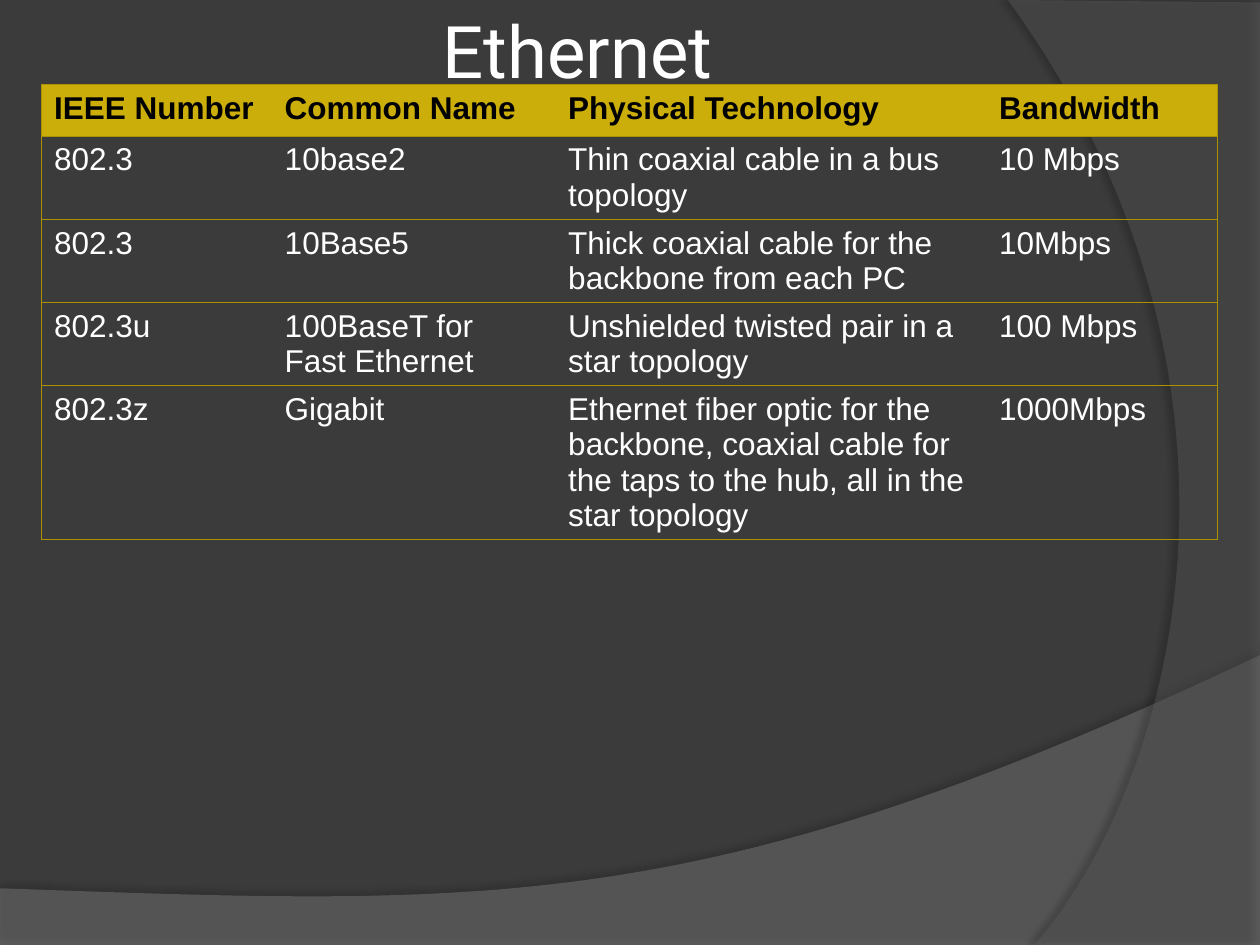
import pptx
import pptx.util
import pptx.dml.color
import pptx.enum.text
import pptx.oxml
import pptx.oxml.ns
from pptx.util import Inches

HUES = {"back": "3B3B3B", "wave": "7F7F7F", "arc": "5E5E5E", "shade": "000000",
        "head": "CCAE0A", "line": "AB9200", "dark": "000000", "light": "FFFFFF"}
NS = pptx.oxml.ns.nsdecls("a")


def tint(name):
    return pptx.dml.color.RGBColor.from_string(HUES[name])


def write(frame, text, font="Arial", size=18, hue="light", bold=False, align="LEFT"):
    para = frame.paragraphs[0]
    para.alignment = getattr(pptx.enum.text.PP_ALIGN, align)
    run = para.add_run()
    run.text = text
    run.font.name = font
    run.font.size = pptx.util.Pt(size)
    run.font.bold = bold
    run.font.color.rgb = tint(hue)


deck = pptx.Presentation()
deck.slide_width, deck.slide_height = Inches(10), Inches(7.5)
slide = deck.slides.add_slide(deck.slide_layouts[5])
slide.background.fill.solid()
slide.background.fill.fore_color.rgb = tint("back")
title = slide.shapes.title

# Backdrop curves: straight corners, then one Bezier from the last corner.
# Each: hue, opacity %, shadow opacity %, shadow distance pt, angle, corners, curve
curves = [
    ("wave", 45, 35, 3.5, 270, [(0, 7.05), (0, 7.5), (10, 7.5), (10, 5.2)],
     [(5.59, 7.29), (3.91, 7.19), (0, 7.05)]),
    ("arc", 40, 45, 4, 180, [(10, 0.02), (10, 7.5), (8.21, 7.5)],
     [(9.35, 6.19), (10.18, 3), (8, 0)]),
]
STEPS = 60
for hue, alpha, dim, dist, angle, points, bend in curves:
    ends = [points[-1]] + bend
    dots = list(points)
    for step in range(1, STEPS + 1):
        t = step / STEPS
        mix = [(1 - t) ** 3, 3 * t * (1 - t) ** 2, 3 * t * t * (1 - t), t ** 3]
        dots.append([sum(m * e[axis] for m, e in zip(mix, ends)) for axis in (0, 1)])
    dots = [(Inches(x), Inches(y)) for x, y in dots]
    pen = slide.shapes.build_freeform(*dots[0], scale=1.0)
    pen.add_line_segments(dots[1:], close=True)
    shape = pen.convert_to_shape()
    shape.fill.solid()
    shape.fill.fore_color.rgb = tint(hue)
    shape.line.fill.background()
    color = shape.element.spPr.find(".//" + pptx.oxml.ns.qn("a:srgbClr"))
    color.append(pptx.oxml.parse_xml(f'<a:alpha {NS} val="{alpha * 1000}"/>'))
    shape.element.spPr.append(pptx.oxml.parse_xml(
        f'<a:effectLst {NS}><a:outerShdw blurRad="{pptx.util.Pt(4)}" '
        f'dist="{pptx.util.Pt(dist)}" dir="{angle * 60000}" algn="ctr" rotWithShape="0">'
        f'<a:srgbClr val="{HUES["shade"]}"><a:alpha val="{dim * 1000}"/></a:srgbClr>'
        f'</a:outerShdw></a:effectLst>'))
    title.element.addprevious(shape.element)

# Title
title.left, title.top = Inches(0.5), Inches(0.08)
title.width, title.height = Inches(8.17), Inches(0.62)
frame = title.text_frame
frame.word_wrap = True
frame.auto_size = pptx.enum.text.MSO_AUTO_SIZE.NONE
frame.vertical_anchor = pptx.enum.text.MSO_ANCHOR.MIDDLE
frame.margin_left = frame.margin_right = Inches(0.05)
frame.margin_top = frame.margin_bottom = Inches(0.05)
write(frame, "Ethernet", font="Roboto", size=41.4, align="CENTER")

# Table
rows = [
    ("IEEE Number", "Common Name", "Physical Technology", "Bandwidth"),
    ("802.3", "10base2", "Thin coaxial cable in a bus topology", "10 Mbps"),
    ("802.3", "10Base5", "Thick coaxial cable for the backbone from each PC", "10Mbps"),
    ("802.3u", "100BaseT for Fast Ethernet",
     "Unshielded twisted pair in a star topology", "100 Mbps"),
    ("802.3z", "Gigabit", "Ethernet fiber optic for the backbone, coaxial cable for "
     "the taps to the hub, all in the star topology", "1000Mbps"),
]
wide = [1.83, 2.25, 3.42, 1.83]
high = 0.41
grid = slide.shapes.add_table(len(rows), len(wide), Inches(0.33), Inches(0.67),
                              Inches(sum(wide)), Inches(high * len(rows))).table
grid.horz_banding = False
for col, width in zip(grid.columns, wide):
    col.width = Inches(width)
for r, row in enumerate(rows):
    grid.rows[r].height = Inches(high)
    for c, text in enumerate(row):
        cell = grid.cell(r, c)
        top = r == 0
        if top:
            cell.fill.solid()
            cell.fill.fore_color.rgb = tint("head")
        else:
            cell.fill.background()
        write(cell.text_frame, text, hue="dark" if top else "light", bold=top)
        # Rules run across every row; uprights only at the outer edges
        sides = {"L": c == 0, "R": c == len(wide) - 1, "T": True, "B": True}
        for spot, (side, shown) in enumerate(sides.items()):
            ink = (f'<a:solidFill><a:srgbClr val="{HUES["line"]}"/></a:solidFill>'
                   if shown else "<a:noFill/>")
            cell._tc.get_or_add_tcPr().insert(spot, pptx.oxml.parse_xml(
                f'<a:ln{side} {NS} w="{pptx.util.Pt(0.75)}">{ink}</a:ln{side}>'))

deck.save("out.pptx")
